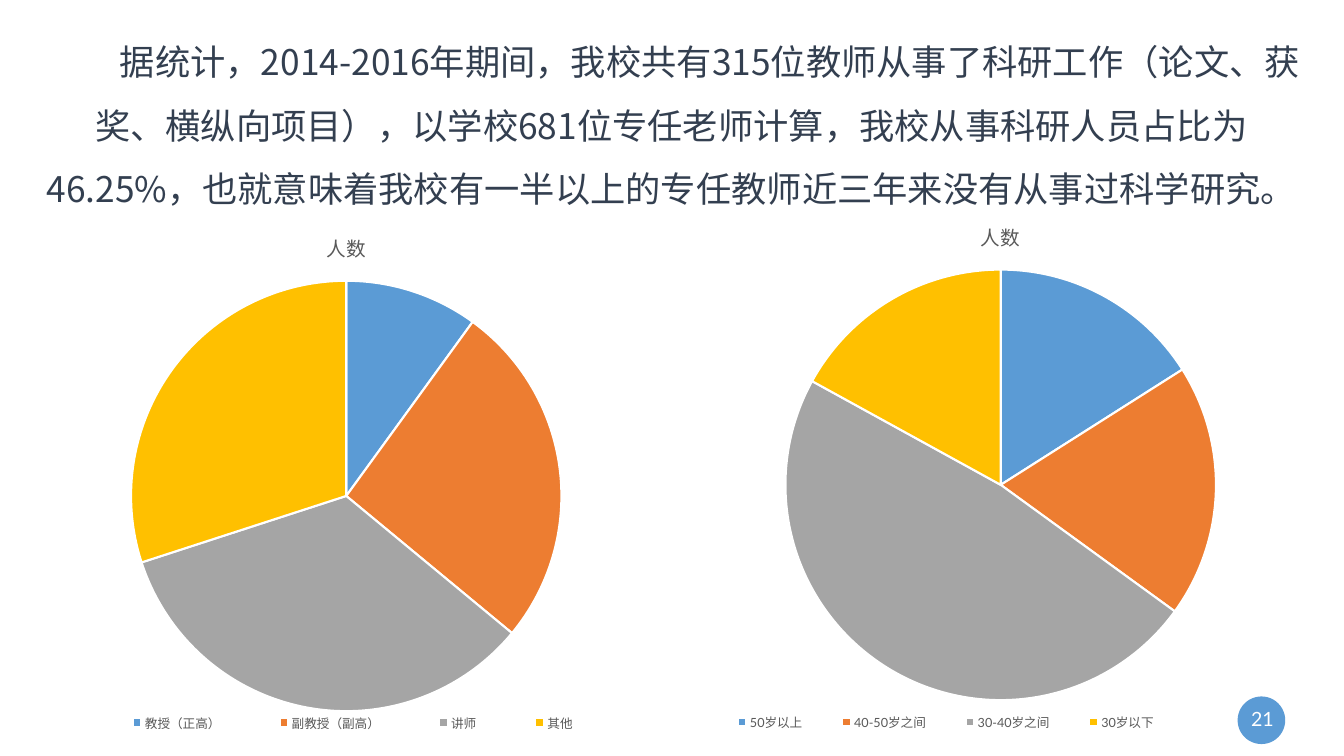
from lxml.etree import SubElement
from pptx import Presentation
from pptx.chart.data import CategoryChartData
from pptx.dml.color import RGBColor
from pptx.enum.chart import XL_CHART_TYPE, XL_LEGEND_POSITION
from pptx.enum.shapes import MSO_SHAPE
from pptx.enum.text import MSO_ANCHOR, PP_ALIGN
from pptx.oxml import parse_xml
from pptx.oxml.ns import nsdecls, qn
from pptx.util import Cm, Pt

COLORS = {
    "title": "333F50",
    "label": "595959",
    "white": "FFFFFF",
    "blue": "5B9BD5",
    "orange": "ED7D31",
    "gray": "A5A5A5",
    "yellow": "FFC000",
}
SLICE_COLORS = ["blue", "orange", "gray", "yellow"]
BODY_FONT = "Lato"
TITLE_FONT = "Noto Sans CJK SC"
SERIES_NAME = "人数"
SUMMARY = (
    "据统计，2014-2016年期间，我校共有315位教师从事了科研工作（论文、获奖、横纵向项目），"
    "以学校681位专任老师计算，我校从事科研人员占比为46.25%，"
    "也就意味着我校有一半以上的专任教师近三年来没有从事过科学研究。"
)


def color(name):
    return RGBColor.from_string(COLORS[name])


def apply_format(target, values):
    for name, value in values.items():
        setattr(target, name, value)


def format_font(font, size, color_name, name=BODY_FONT):
    apply_format(font, {"size": Pt(size), "name": name, "bold": False})
    font.color.rgb = color(color_name)


def add_text(slide, text, box, size, color_name, font_name=BODY_FONT,
             line_spacing=1.0, first_indent=None):
    shape = slide.shapes.add_textbox(*box)
    margins = ("margin_left", "margin_right", "margin_top", "margin_bottom")
    apply_format(shape.text_frame, {
        "word_wrap": True,
        "vertical_anchor": MSO_ANCHOR.MIDDLE,
        **dict.fromkeys(margins, Cm(0.13)),
    })
    paragraph = shape.text_frame.paragraphs[0]
    apply_format(paragraph, {"alignment": PP_ALIGN.CENTER, "line_spacing": line_spacing})
    if first_indent is not None:
        paragraph._p.get_or_add_pPr().set("indent", str(first_indent))
    run = paragraph.add_run()
    run.text = text
    format_font(run.font, size, color_name, font_name)
    SubElement(run.font._element, qn("a:ea"), typeface=font_name)


def manual_layout(x, y, width, height, inner=False):
    """Build a chart layout from fractions of the chart area."""
    target = '<c:layoutTarget val="inner"/>' if inner else ""
    return parse_xml(
        f'<c:layout {nsdecls("c")}><c:manualLayout>{target}'
        '<c:xMode val="edge"/><c:yMode val="edge"/>'
        f'<c:x val="{x:.3f}"/><c:y val="{y:.3f}"/>'
        f'<c:w val="{width:.3f}"/><c:h val="{height:.3f}"/>'
        '</c:manualLayout></c:layout>'
    )


def add_pie(slide, box, categories, values, legend_area):
    data = CategoryChartData()
    data.categories = categories
    data.add_series(SERIES_NAME, values)
    chart = slide.shapes.add_chart(XL_CHART_TYPE.PIE, *box, data).chart
    format_font(chart.font, 10, "label")

    # Title and legend
    chart.has_title = True
    chart.chart_title.text_frame.text = SERIES_NAME
    format_font(chart.chart_title.text_frame.paragraphs[0].runs[0].font, 14, "label")
    chart.has_legend = True
    apply_format(chart.legend, {
        "position": XL_LEGEND_POSITION.BOTTOM, "include_in_layout": False,
    })
    format_font(chart.legend.font, 9, "label")

    # Slices
    plot = chart.plots[0]
    plot.vary_by_categories = True
    for index, name in enumerate(SLICE_COLORS):
        slice_format = plot.series[0].points[index].format
        slice_format.fill.solid()
        slice_format.fill.fore_color.rgb = color(name)
        slice_format.line.color.rgb = color("white")
        slice_format.line.width = Pt(1.5)

    # Pie and legend areas
    width, height = box[2:]
    diameter = Cm(10.85)
    plot_area = chart._chartSpace.chart.plotArea
    legend = chart.legend._element
    for parent in (plot_area, legend):
        for layout in parent.findall(qn("c:layout")):
            parent.remove(layout)
    plot_area.insert(0, manual_layout(
        (1 - diameter / width) / 2, Cm(1.75) / height,
        diameter / width, diameter / height, inner=True))
    legend.find(qn("c:legendPos")).addnext(manual_layout(*legend_area))


def add_page_number(slide, number):
    badge = slide.shapes.add_shape(
        MSO_SHAPE.OVAL, Cm(31.19), Cm(17.55), Cm(1.2), Cm(1.2))
    badge.shadow.inherit = False
    badge.fill.solid()
    badge.fill.fore_color.rgb = color("blue")
    badge.line.fill.background()
    add_text(slide, number, (Cm(31.32), Cm(17.68), Cm(0.99), Cm(0.84)), 14, "white")


def main():
    presentation = Presentation()
    apply_format(presentation, {"slide_width": Cm(33.87), "slide_height": Cm(19.05)})
    slide = presentation.slides.add_slide(presentation.slide_layouts[6])

    # Age groups
    add_pie(slide, (Cm(16.05), Cm(5.05), Cm(18.34), Cm(13.84)),
            ["50岁以上", "40-50岁之间", "30-40岁之间", "30岁以下"],
            [16, 19, 48, 17], (0.09, 0.92, 0.67, 0.06))

    # Summary
    add_text(slide, SUMMARY, (Cm(0.89), Cm(1.6), Cm(32.05), Cm(2.57)), 25.2,
             "title", TITLE_FONT, line_spacing=1.5, first_indent=Cm(1.95))

    # Academic ranks
    add_pie(slide, (Cm(0.48), Cm(5.33), Cm(16.51), Cm(13.84)),
            ["教授（正高）", "副教授（副高）", "讲师", "其他"],
            [10, 26, 34, 30], (0.09, 0.9, 0.84, 0.06))

    add_page_number(slide, "21")
    presentation.save("out.pptx")


if __name__ == "__main__":
    main()
